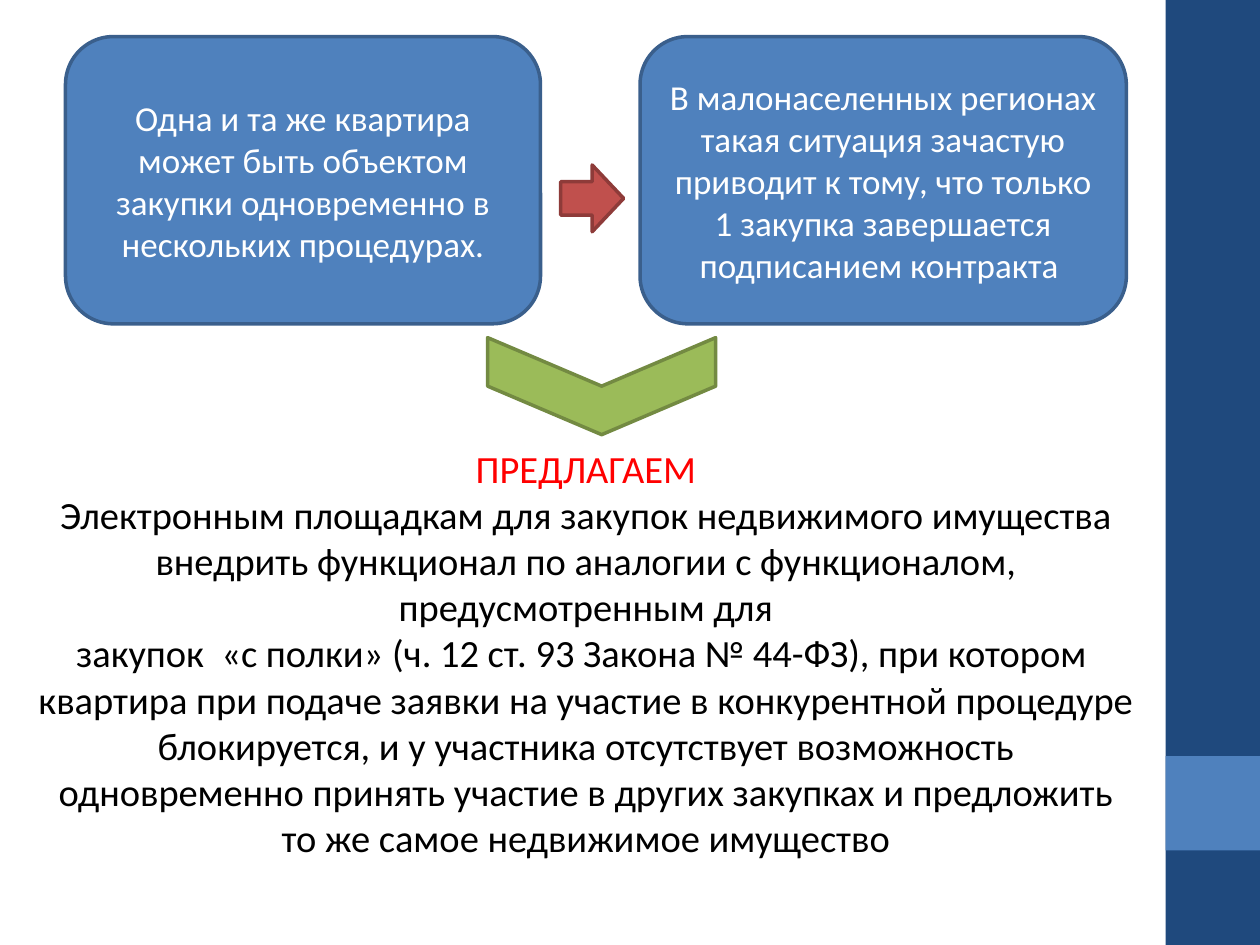
from pptx import Presentation
from pptx.dml.color import RGBColor
from pptx.enum.shapes import MSO_SHAPE
from pptx.enum.text import MSO_ANCHOR, MSO_AUTO_SIZE, PP_ALIGN
from pptx.util import Inches, Pt

RECTANGLE = MSO_SHAPE.RECTANGLE
ROUNDED = MSO_SHAPE.ROUNDED_RECTANGLE
CHEVRON = MSO_SHAPE.CHEVRON
RIGHT_ARROW = MSO_SHAPE.RIGHT_ARROW
MIDDLE = MSO_ANCHOR.MIDDLE
CENTER = PP_ALIGN.CENTER
GROW = MSO_AUTO_SIZE.SHAPE_TO_FIT_TEXT

NAVY = RGBColor(0x1F, 0x49, 0x7D)
BLUE = RGBColor(0x4F, 0x81, 0xBD)
BLUE_EDGE = RGBColor(0x3A, 0x5F, 0x8C)
GREEN = RGBColor(0x9B, 0xBB, 0x59)
GREEN_EDGE = RGBColor(0x73, 0x8A, 0x42)
BRICK = RGBColor(0xC0, 0x50, 0x4D)
BRICK_EDGE = RGBColor(0x8E, 0x3B, 0x39)
RED = RGBColor(0xFF, 0x00, 0x00)
BLACK = RGBColor(0x00, 0x00, 0x00)
WHITE = RGBColor(0xFF, 0xFF, 0xFF)

prs = Presentation()
prs.slide_width = Inches(10)
prs.slide_height = Inches(7.5)
slide = prs.slides.add_slide(prs.slide_layouts[6])


def add_figure(kind, left, top, width, height, fill, edge=None):
    figure = slide.shapes.add_shape(
        kind, Inches(left), Inches(top), Inches(width), Inches(height)
    )
    figure.shadow.inherit = False
    figure.fill.solid()
    figure.fill.fore_color.rgb = fill
    if edge is None:
        figure.line.fill.background()
    else:
        figure.line.color.rgb = edge
        figure.line.width = Pt(2)
    return figure


def write(paragraph, text, size, color):
    paragraph.alignment = CENTER
    run = paragraph.add_run()
    run.text = text
    run.font.name = "Calibri"
    run.font.size = Pt(size)
    run.font.color.rgb = color


add_figure(RECTANGLE, 9.25, 0, 0.75, 7.5, NAVY)
add_figure(RECTANGLE, 9.25, 6, 0.75, 0.75, BLUE)

conclusion = add_figure(CHEVRON, 4.39, 2.16, 0.77, 1.81, GREEN, GREEN_EDGE)
conclusion.rotation = 90

proposal = slide.shapes.add_textbox(Inches(0.2), Inches(3.48), Inches(8.9), Inches(3.43))
proposal_text = proposal.text_frame
proposal_text.word_wrap = True
proposal_text.auto_size = GROW
write(proposal_text.paragraphs[0], "ПРЕДЛАГАЕМ", 22, RED)
for statement in (
    "Электронным площадкам для закупок недвижимого имущества внедрить функционал "
    "по аналогии с функционалом, предусмотренным для",
    "закупок  «с полки» (ч. 12 ст. 93 Закона № 44-ФЗ), при котором ",
    "квартира при подаче заявки на участие в конкурентной процедуре блокируется, "
    "и у участника отсутствует возможность одновременно принять участие в других "
    "закупках и предложить то же самое недвижимое имущество",
):
    write(proposal_text.add_paragraph(), statement, 22, BLACK)

for left, width, statement in (
    (0.52, 3.77, "Одна и та же квартира может быть объектом закупки одновременно "
                 "в нескольких процедурах."),
    (5.08, 3.86, "В малонаселенных регионах такая ситуация зачастую приводит к тому, "
                 "что только 1 закупка завершается подписанием контракта "),
):
    card = add_figure(ROUNDED, left, 0.29, width, 2.28, BLUE, BLUE_EDGE)
    card.text_frame.word_wrap = True
    card.text_frame.vertical_anchor = MIDDLE
    write(card.text_frame.paragraphs[0], statement, 20, WHITE)

add_figure(RIGHT_ARROW, 4.45, 1.31, 0.5, 0.53, BRICK, BRICK_EDGE)

prs.save("out.pptx")
